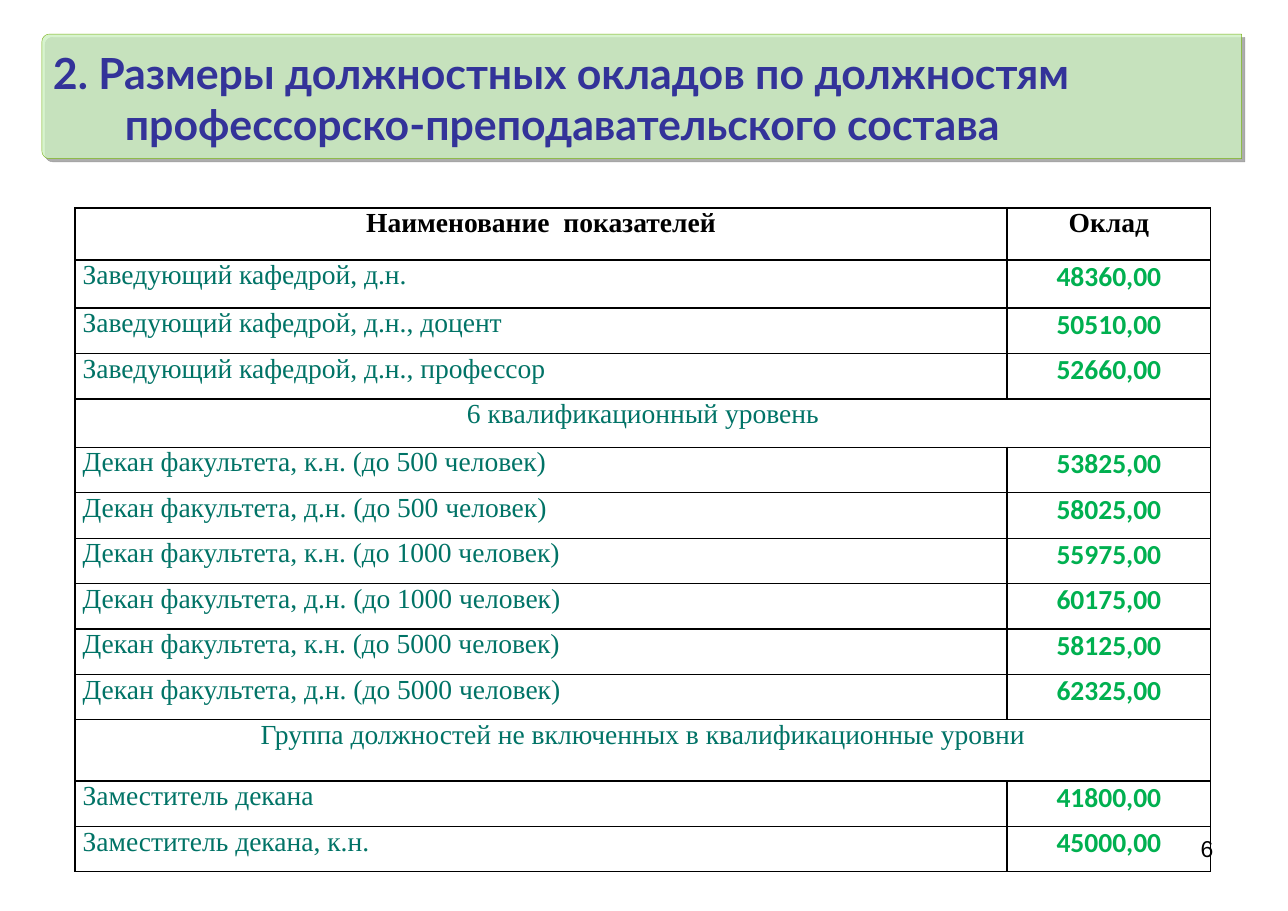
from math import cos, sin, radians
from lxml.etree import SubElement
from pptx import Presentation
from pptx.dml.color import RGBColor
from pptx.enum.text import MSO_ANCHOR as Anchor, MSO_AUTO_SIZE as AutoSize, PP_ALIGN as Align
from pptx.oxml import parse_xml
from pptx.oxml.ns import nsdecls, qn
from pptx.util import Pt

BLACK, TEAL, GREEN = "000000", "007366", "00B050"


def color(hex_string):
    return RGBColor.from_string(hex_string)


def add_text(paragraph, text, font_name, size, hex_string, bold, align):
    paragraph.alignment = align
    run = paragraph.add_run()
    run.text = text
    run.font.name = font_name
    run.font.size = Pt(size)
    run.font.bold = bold
    run.font.color.rgb = color(hex_string)


presentation = Presentation()
presentation.slide_width, presentation.slide_height = Pt(841.68), Pt(595.44)
slide = presentation.slides.add_slide(presentation.slide_layouts[5])

# Banner with rounded left corners and a shadow
left, top, right, bottom, radius = 27.4, 22.3, 811.4, 103.7, 5
outline = [(right, top), (right, bottom)]
for center_y, start in ((bottom - radius, 90), (top + radius, 180)):
    for angle in range(start, start + 91, 15):
        outline.append((left + radius + radius * cos(radians(angle)),
                        center_y + radius * sin(radians(angle))))
points = [(Pt(x), Pt(y)) for x, y in outline]
builder = slide.shapes.build_freeform(*points[0], scale=1.0)
builder.add_line_segments(points[1:], close=True)
banner = builder.convert_to_shape()
banner.fill.solid()
banner.fill.fore_color.rgb = color("CDF0C2")
fill_color = banner._element.spPr.find(qn("a:solidFill"))[0]
SubElement(fill_color, qn("a:alpha"), val="80000")
banner.line.color.rgb = color("78B012")
banner.line.width = Pt(0.25)
banner._element.spPr.append(parse_xml(
    f'<a:effectLst {nsdecls("a")}><a:outerShdw dist="38100" dir="2700000" algn="tl" rotWithShape="0">'
    '<a:srgbClr val="000000"><a:alpha val="40000"/></a:srgbClr></a:outerShdw></a:effectLst>'))
slide.shapes._spTree.insert(2, banner._element)

# Title over the banner, second line indented
title = slide.shapes.title
title.left, title.top = Pt(left), Pt(top + 1)
title.width, title.height = Pt(right - left), Pt(bottom - top)
frame = title.text_frame
frame.word_wrap = True
frame.auto_size = AutoSize.NONE
frame.vertical_anchor = Anchor.MIDDLE
paragraph = frame.paragraphs[0]
properties = paragraph._p.get_or_add_pPr()
properties.set("marL", str(Pt(47)))
properties.set("indent", str(Pt(-47)))
add_text(paragraph, "2. Размеры должностных окладов по должностям профессорско-преподавательского состава",
         "Lato", 28, "333399", True, Align.LEFT)

# Slide number
number_box = slide.shapes.add_textbox(Pt(603.4), Pt(542.2), Pt(196.6), Pt(41))
number_box.text_frame.word_wrap = True
add_text(number_box.text_frame.paragraphs[0], "6", "Arial", 15, BLACK, False, Align.RIGHT)

# Salary table: label, salary (None for a section row), row height
rows = [
    ("Наименование  показателей", "Оклад", 34),
    ("Заведующий кафедрой, д.н.", "48360,00", 31.4),
    ("Заведующий кафедрой, д.н., доцент", "50510,00", 29.7),
    ("Заведующий кафедрой, д.н., профессор", "52660,00", 29.7),
    ("6 квалификационный уровень", None, 31.7),
    ("Декан факультета, к.н. (до 500 человек)", "53825,00", 29.7),
    ("Декан факультета, д.н. (до 500 человек)", "58025,00", 29.7),
    ("Декан факультета, к.н. (до 1000 человек)", "55975,00", 29.7),
    ("Декан факультета, д.н. (до 1000 человек)", "60175,00", 29.7),
    ("Декан факультета, к.н. (до 5000 человек)", "58125,00", 29.7),
    ("Декан факультета, д.н. (до 5000 человек)", "62325,00", 29.7),
    ("Группа должностей не включенных в квалификационные уровни", None, 40),
    ("Заместитель декана", "41800,00", 29.7),
    ("Заместитель декана, к.н.", "45000,00", 29.7),
]
table = slide.shapes.add_table(len(rows), 2, Pt(49), Pt(136), Pt(742.3),
                               Pt(sum(row[2] for row in rows))).table
table.first_row = table.horz_banding = False
table.columns[0].width, table.columns[1].width = Pt(609.1), Pt(133.2)

for index, (label, salary, height) in enumerate(rows):
    table.rows[index].height = Pt(height)
    label_cell, salary_cell = table.cell(index, 0), table.cell(index, 1)

    # Cell margins, borders and fill
    for cell in (label_cell, salary_cell):
        cell.margin_left = cell.margin_right = Pt(5)
        cell.margin_top = cell.margin_bottom = 0
        cell.vertical_anchor = Anchor.TOP
        cell_properties = cell._tc.get_or_add_tcPr()
        for side in ("lnL", "lnR", "lnT", "lnB"):
            border = SubElement(cell_properties, qn(f"a:{side}"), w=str(Pt(1)))
            SubElement(SubElement(border, qn("a:solidFill")), qn("a:srgbClr"), val=BLACK)
        cell.fill.background()

    # Cell text
    is_header = index == 0
    if salary is None:
        label_cell.merge(salary_cell)
    else:
        add_text(salary_cell.text_frame.paragraphs[0], salary,
                 "Times New Roman" if is_header else "Calibri", 18,
                 BLACK if is_header else GREEN, True, Align.CENTER)
    add_text(label_cell.text_frame.paragraphs[0], label, "Times New Roman", 18,
             BLACK if is_header else TEAL, is_header,
             Align.CENTER if is_header or salary is None else Align.JUSTIFY)

presentation.save("out.pptx")
